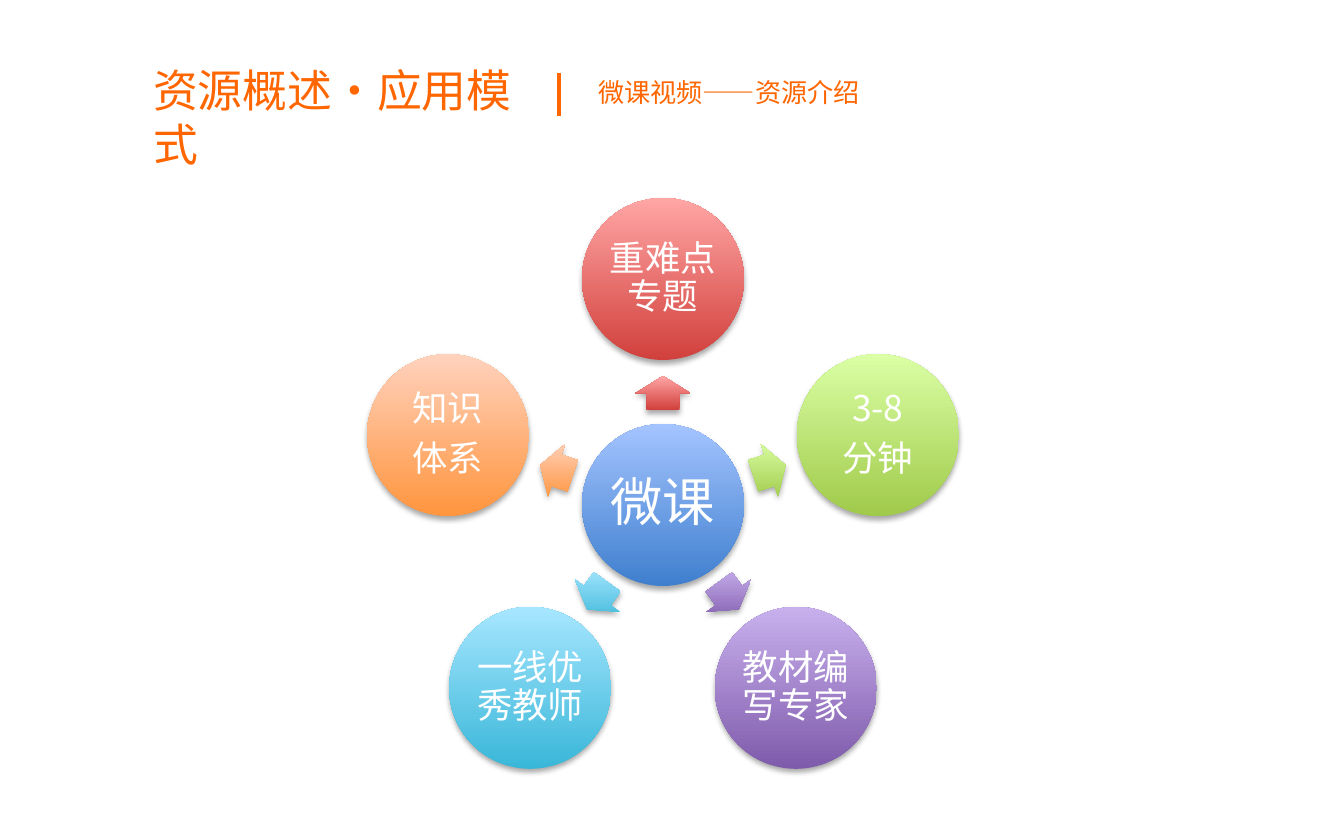
from dataclasses import dataclass
from math import cos, radians, sin

from lxml.etree import SubElement
from pptx import Presentation
from pptx.dml.color import RGBColor
from pptx.enum.shapes import MSO_CONNECTOR, MSO_SHAPE
from pptx.enum.text import MSO_ANCHOR, PP_ALIGN
from pptx.oxml.ns import qn
from pptx.util import Emu, Pt

FONT = "Noto Sans CJK SC"
ORANGE, WHITE = "FF6600", "FFFFFF"
CENTER_X, CENTER_Y = 663, 505
DIAMETER, ORBIT = 162, 226
ARROW_LENGTH, ARROW_WIDTH, ARROW_ORBIT = 34, 55, 112


@dataclass(frozen=True)
class Topic:
    """One coloured circle with its lines of text."""

    lines: tuple[str, ...]
    dark: str
    light: str
    size: int = 19
    inset: int = 4


HUB = Topic(("微课",), "3F7FCE", "A4C4FF", 28, 5)
SPOKES = (
    Topic(("重难点专题",), "D1403C", "FFA6A5"),
    Topic(("3-8", "分钟"), "A0CA4A", "DAFFA5"),
    Topic(("教材编写专家",), "7F5BAB", "C8B0ED"),
    Topic(("一线优秀教师",), "39B7D8", "A7E6FF"),
    Topic(("知识", "体系"), "FF953E", "FFD2BD"),
)


def px(value: float) -> Emu:
    """Turn pixels into EMU."""
    return Emu(round(value * 914400 / 134.4))


def color(value: str) -> RGBColor:
    """Turn a hex string into a colour."""
    return RGBColor.from_string(value)


def apply(target, values: dict) -> None:
    """Set each named attribute on the target."""
    for name, value in values.items():
        setattr(target, name, value)


def write(para, text: str, size: int, hue: str) -> None:
    """Add one run in the slide font."""
    span = para.add_run()
    span.text = text
    apply(span.font, {"size": Pt(size), "name": FONT})
    span.font.color.rgb = color(hue)
    properties = span.font._element
    properties.set("lang", "zh-CN")
    SubElement(properties, qn("a:ea"), typeface=FONT)


def add_heading(page, text: str, left: int, top: int, width: int, height: int, size: int) -> None:
    """Draw an orange heading."""
    box = page.shapes.add_textbox(px(left), px(top), px(width), px(height))
    box.text_frame.word_wrap = True
    write(box.text_frame.paragraphs[0], text, size, ORANGE)


def add_divider(page, x: int, top: int, bottom: int) -> None:
    """Draw the upright line between the headings."""
    line = page.shapes.add_connector(MSO_CONNECTOR.STRAIGHT, px(x), px(top), px(x), px(bottom))
    line.line.color.rgb = color(ORANGE)
    line.line.width = Pt(2)
    SubElement(line._element.spPr, qn("a:effectLst"))


def add_glossy(page, kind: MSO_SHAPE, x: float, y: float, width: int, height: int, topic: Topic):
    """Draw a shaded shape with a soft shadow, centred on a point."""
    shape = page.shapes.add_shape(kind, px(x - width / 2), px(y - height / 2), px(width), px(height))
    shape.line.fill.background()
    shape.fill.gradient()
    shape.fill.gradient_angle = 90
    for stop, hue in zip(shape.fill.gradient_stops, (topic.dark, topic.light)):
        stop.color.rgb = color(hue)
    shape._element.spPr.find(qn("a:gradFill")).set("rotWithShape", "0")
    shape.shadow.inherit = False
    effects = shape._element.spPr.find(qn("a:effectLst"))
    shadow = SubElement(effects, qn("a:outerShdw"), blurRad=str(Pt(3.1)), dist=str(Pt(1.8)),
                        dir="5400000", rotWithShape="0")
    black = SubElement(shadow, qn("a:srgbClr"), val="000000")
    SubElement(black, qn("a:alpha"), val="35000")
    return shape


def add_circle(page, x: float, y: float, topic: Topic) -> None:
    """Draw a topic circle and its text."""
    circle = add_glossy(page, MSO_SHAPE.OVAL, x, y, DIAMETER, DIAMETER, topic)
    frame = circle.text_frame
    sides = ("left", "top", "right", "bottom")
    apply(frame, {f"margin_{side}": px(topic.inset) for side in sides})
    apply(frame, {"word_wrap": True, "vertical_anchor": MSO_ANCHOR.MIDDLE})
    for index, text in enumerate(topic.lines):
        para = frame.add_paragraph() if index else frame.paragraphs[0]
        apply(para, {"alignment": PP_ALIGN.CENTER, "line_spacing": 0.9,
                     "space_after": Pt(topic.size * 0.35)})
        write(para, text, topic.size, WHITE)


def add_spoke(page, angle: float, topic: Topic) -> None:
    """Draw an arrow from the hub and the circle it points to."""
    across, down = cos(radians(angle)), sin(radians(angle))
    arrow = add_glossy(page, MSO_SHAPE.RIGHT_ARROW, CENTER_X + ARROW_ORBIT * across,
                       CENTER_Y + ARROW_ORBIT * down, ARROW_LENGTH, ARROW_WIDTH, topic)
    arrow.rotation = angle % 360
    arrow.adjustments[0] = 0.6
    add_circle(page, CENTER_X + ORBIT * across, CENTER_Y + ORBIT * down, topic)


def main() -> None:
    """Build and save the slide."""
    deck = Presentation()
    apply(deck, {"slide_width": px(1344), "slide_height": px(840)})
    page = deck.slides.add_slide(deck.slide_layouts[6])
    add_heading(page, "资源概述·应用模式", 140, 56, 400, 67, 24)
    add_heading(page, "微课视频——资源介绍", 585, 70, 296, 46, 14)
    add_divider(page, 559, 73, 116)
    add_circle(page, CENTER_X, CENTER_Y, HUB)
    for index, topic in enumerate(SPOKES):
        add_spoke(page, index * 360 / len(SPOKES) - 90, topic)
    deck.save("out.pptx")


if __name__ == "__main__":
    main()
